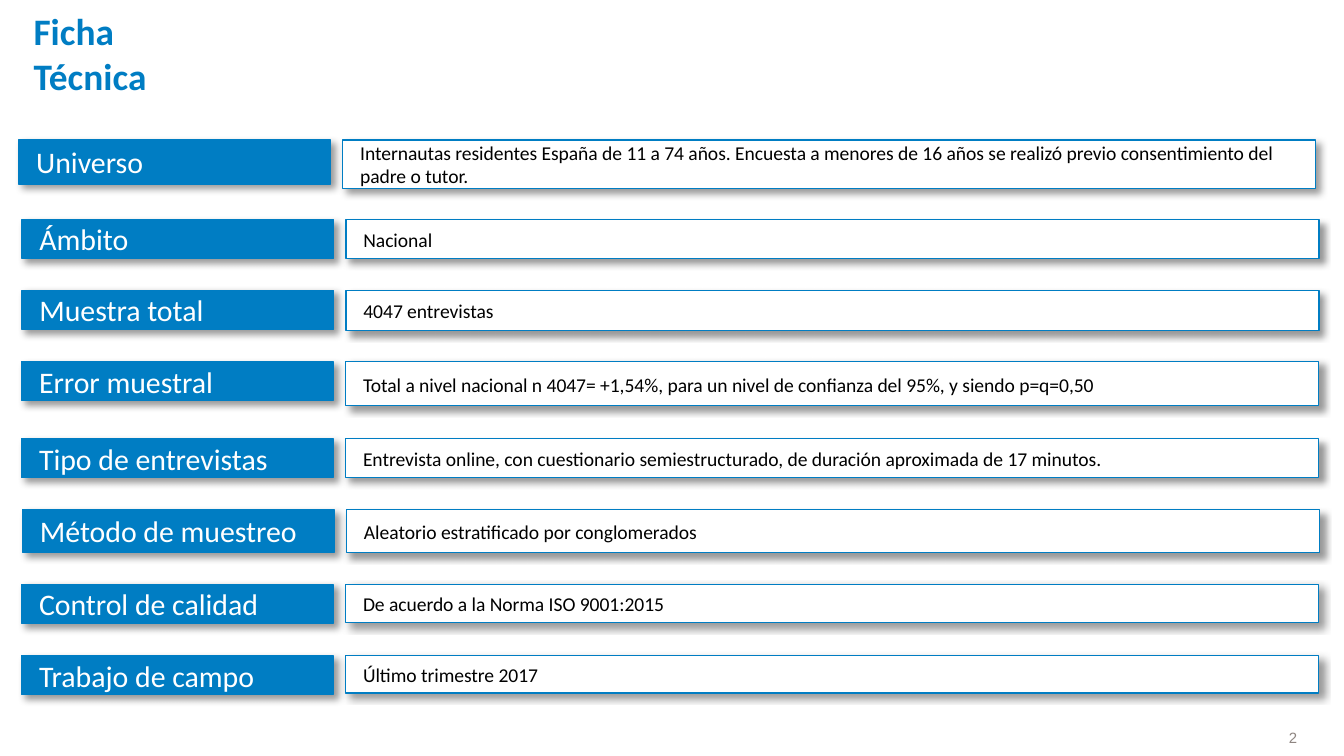
from lxml.etree import SubElement
from pptx import Presentation
from pptx.dml.color import RGBColor
from pptx.enum.shapes import MSO_SHAPE
from pptx.enum.text import MSO_ANCHOR, PP_ALIGN
from pptx.oxml.ns import qn
from pptx.util import Pt

COLORS = {"blue": "007DC3", "white": "FFFFFF", "black": "000000", "gray": "8E8581"}

TITLE = "Ficha Técnica"
PAGE_NUMBER = "2"

# label, value, left, top, label height, value height, value line spacing
ROWS = [
    ("Universo",
     "Internautas residentes España de 11 a 74 años. Encuesta a menores de 16 años "
     "se realizó previo consentimiento del padre o tutor.",
     10, 75, 23.5, 26, 1),
    ("Ámbito", "Nacional", 11.7, 117.5, 21, 21, 1.05),
    ("Muestra total", "4047 entrevistas", 11.7, 155.5, 21, 21.5, 1.05),
    ("Error muestral",
     "Total a nivel nacional n 4047= +1,54%, para un nivel de confianza del 95%, "
     "y siendo p=q=0,50",
     11.5, 193.7, 21, 23.7, 1.05),
    ("Tipo de entrevistas",
     "Entrevista online, con cuestionario semiestructurado, de duración aproximada "
     "de 17 minutos.",
     11.5, 235, 21, 21, 1),
    ("Método de muestreo", "Aleatorio estratificado por conglomerados",
     12, 273, 23, 23, 1.05),
    ("Control de calidad", "De acuerdo a la Norma ISO 9001:2015",
     11.5, 313, 21, 20.5, 1),
    ("Trabajo de campo", "Último trimestre 2017", 11.5, 351.2, 21, 20, 1),
]

LABEL_WIDTH = 167
VALUE_OFFSET = 173.6
VALUE_WIDTH = 521.3


def color(name):
    return RGBColor.from_string(COLORS[name])


def write(holder, text, size, tone, font="Calibri", bold=False, insets=(0, 0),
          anchor=MSO_ANCHOR.MIDDLE, align=PP_ALIGN.LEFT, spacing=1):
    frame = holder.text_frame
    frame.word_wrap = True
    frame.vertical_anchor = anchor
    frame.margin_left = frame.margin_right = Pt(insets[0])
    frame.margin_top = frame.margin_bottom = Pt(insets[1])
    paragraph = frame.paragraphs[0]
    paragraph.alignment = align
    paragraph.line_spacing = spacing
    run = paragraph.add_run()
    run.text = text
    run.font.size = Pt(size)
    run.font.name = font
    run.font.bold = bold
    run.font.color.rgb = color(tone)


def cast_shadow(box):
    box.shadow.inherit = False
    effects = box.element.spPr.find(qn("a:effectLst"))
    shadow = SubElement(effects, qn("a:outerShdw"), blurRad=str(Pt(4)),
                        dist=str(Pt(3)), dir="2700000", algn="tl", rotWithShape="0")
    tint = SubElement(shadow, qn("a:srgbClr"), val=COLORS["black"])
    SubElement(tint, qn("a:alpha"), val="40000")


def add_box(group, left, top, width, height, fill):
    box = group.shapes.add_shape(MSO_SHAPE.RECTANGLE, Pt(left), Pt(top),
                                 Pt(width), Pt(height))
    box.fill.solid()
    box.fill.fore_color.rgb = color(fill)
    box.line.color.rgb = color("blue")
    box.line.width = Pt(0.75)
    cast_shadow(box)
    return box


presentation = Presentation()
presentation.slide_width = Pt(720)
presentation.slide_height = Pt(405)
slide = presentation.slides.add_slide(presentation.slide_layouts[6])

# Page number
page_number = slide.shapes.add_textbox(Pt(592.5), Pt(389.5), Pt(102.5), Pt(11.5))
write(page_number, PAGE_NUMBER, 8, "gray", font="Arial", align=PP_ALIGN.RIGHT)

# Title
title = slide.shapes.add_textbox(Pt(18), Pt(4.5), Pt(104), Pt(24.5))
write(title, TITLE, 20, "blue", bold=True, anchor=MSO_ANCHOR.TOP)

# Rows: a blue label beside a white value
for label, value, left, top, label_height, value_height, spacing in ROWS:
    row = slide.shapes.add_group_shape()
    label_box = add_box(row, left, top, LABEL_WIDTH, label_height, "blue")
    write(label_box, label, 16, "white", insets=(9.4, 7.2))
    value_box = add_box(row, left + VALUE_OFFSET, top, VALUE_WIDTH, value_height, "white")
    write(value_box, value, 10.5, "black", insets=(9.4, 5), spacing=spacing)

presentation.save("out.pptx")
